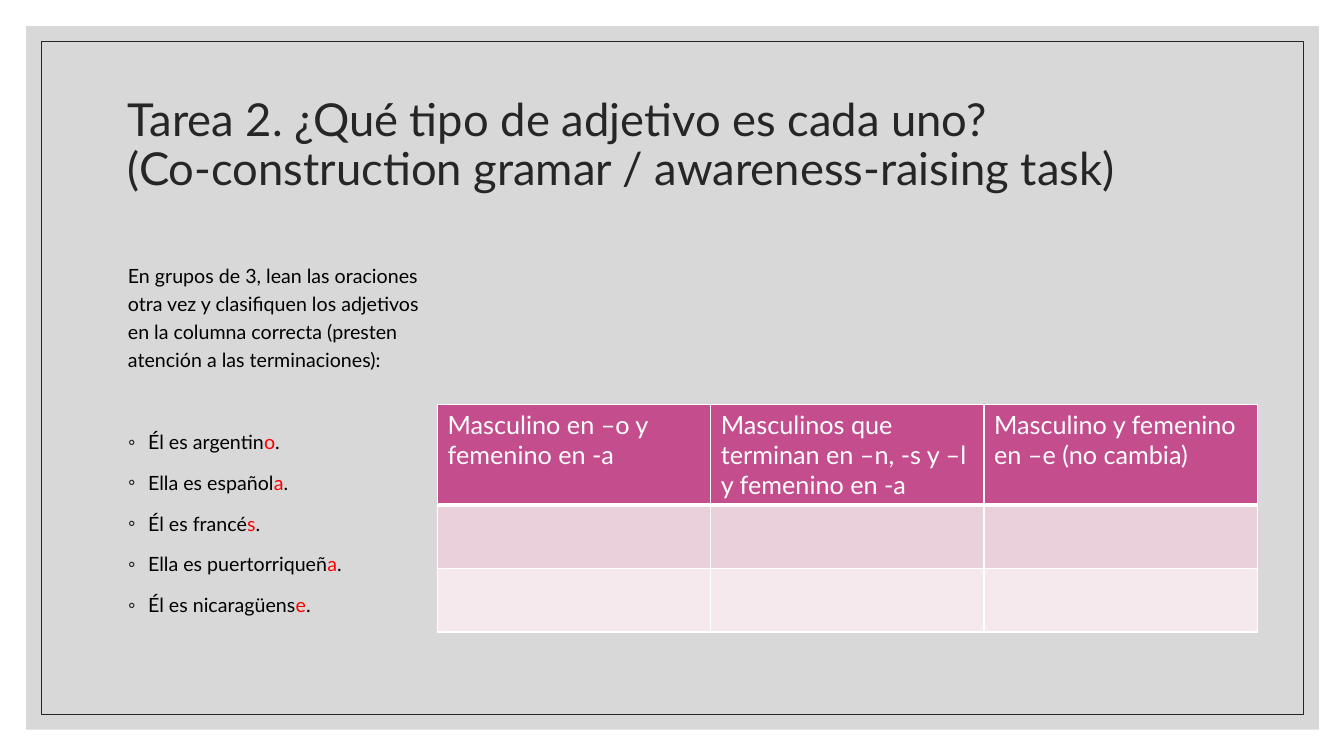
import lxml.etree
import pptx
import pptx.dml.color
import pptx.enum.shapes
import pptx.enum.text
import pptx.oxml.ns
import pptx.util

Inches, Pt = pptx.util.Inches, pptx.util.Pt
qn = pptx.oxml.ns.qn
rgb = pptx.dml.color.RGBColor.from_string
RECTANGLE = pptx.enum.shapes.MSO_SHAPE.RECTANGLE

THEME = {
    "font": "Lato",
    "panel": "BFBFBF", "ink": "262626", "text": "000000", "ending": "FF0000",
    "header": "C34D8D", "bands": ["E9D0DB", "F5E9EE"], "white": "FFFFFF",
    "title_size": 32.4, "body_size": 14, "table_size": 18,
}


def add_run(paragraph, text, size, color):
    run = paragraph.add_run()
    run.text = text
    settings = {"name": THEME["font"], "size": Pt(size), "bold": False}
    for attribute, value in settings.items():
        setattr(run.font, attribute, value)
    run.font.color.rgb = rgb(color)


def add_child(parent, tag, **attributes):
    return lxml.etree.SubElement(parent, qn(tag), attributes)


presentation = pptx.Presentation()
presentation.slide_width = Inches(13.33)
presentation.slide_height = Inches(7.5)
slide = presentation.slides.add_slide(presentation.slide_layouts[6])

# Backdrop: translucent panel with a thin inner frame
panel = slide.shapes.add_shape(RECTANGLE, Inches(0.26), Inches(0.26), Inches(12.82), Inches(6.98))
panel.shadow.inherit = False
panel.fill.solid()
panel.fill.fore_color.rgb = rgb(THEME["panel"])
panel.line.fill.background()
panel_color = panel._element.spPr.find(qn("a:solidFill")).find(qn("a:srgbClr"))
add_child(panel_color, "a:alpha", val="60000")

frame = slide.shapes.add_shape(RECTANGLE, Inches(0.41), Inches(0.41), Inches(12.52), Inches(6.68))
frame.shadow.inherit = False
frame.fill.background()
frame.line.color.rgb = rgb(THEME["ink"])
frame.line.width = Pt(0.5)

# Title
title = slide.shapes.add_textbox(Inches(1.17), Inches(0.7), Inches(11), Inches(1.5)).text_frame
title.word_wrap = True
title.vertical_anchor = pptx.enum.text.MSO_ANCHOR.MIDDLE
heading = title.paragraphs[0]
heading.line_spacing = 0.9
add_run(heading, "Tarea 2. ¿Qué tipo de adjetivo es cada uno?", THEME["title_size"], THEME["ink"])
heading.add_line_break()
add_run(heading, "(Co-construction gramar / awareness-raising task)", THEME["title_size"], THEME["ink"])

# Instructions, then sentences with the adjective ending highlighted
task = slide.shapes.add_textbox(Inches(1.17), Inches(2.52), Inches(3.18), Inches(4.21)).text_frame
task.word_wrap = True
instructions = task.paragraphs[0]
instructions.line_spacing = 1.2
add_run(
    instructions,
    "En grupos de 3, lean las oraciones otra vez y clasifiquen los adjetivos "
    "en la columna correcta (presten atención a las terminaciones):",
    THEME["body_size"], THEME["text"],
)

sentences = [
    ("Él es argentin", "o"),
    ("Ella es español", "a"),
    ("Él es francé", "s"),
    ("Ella es puertorriqueñ", "a"),
    ("Él es nicaragüens", "e"),
]
for index, (stem, ending) in enumerate(sentences):
    sentence = task.add_paragraph()
    sentence.line_spacing = 1.2
    sentence.space_before = Pt(9 if index else 38)
    properties = sentence._p.get_or_add_pPr()
    properties.set("marL", str(Inches(0.2)))
    properties.set("indent", str(-Inches(0.2)))
    bullet_color = add_child(properties, "a:buClr")
    add_child(bullet_color, "a:srgbClr", val=THEME["ink"])
    add_child(properties, "a:buFont", typeface=THEME["font"])
    add_child(properties, "a:buChar", char="◦")
    for text, color in [(stem, "text"), (ending, "ending"), (".", "text")]:
        add_run(sentence, text, THEME["body_size"], THEME[color])

# Classification table
categories = [
    "Masculino en –o y femenino en -a",
    "Masculinos que terminan en –n, -s y –l y femenino en -a",
    "Masculino y femenino en –e (no cambia)",
]
row_heights = [1, 0.63, 0.63]
row_fills = [THEME["header"], *THEME["bands"]]
table = slide.shapes.add_table(
    len(row_heights), len(categories), Inches(4.34), Inches(4.01), Inches(8.13), Inches(2.26)
).table
for column in table.columns:
    column.width = Inches(2.71)

for row_index, (row, height, fill) in enumerate(zip(table.rows, row_heights, row_fills)):
    row.height = Inches(height)
    for cell, category in zip(row.cells, categories):
        cell_properties = cell._tc.get_or_add_tcPr()
        for side in ("L", "R", "T", "B"):
            width = 3 if row_index == 0 and side == "B" else 1
            border = add_child(cell_properties, f"a:ln{side}", w=str(Pt(width)))
            border_fill = add_child(border, "a:solidFill")
            add_child(border_fill, "a:srgbClr", val=THEME["white"])
        cell.fill.solid()
        cell.fill.fore_color.rgb = rgb(fill)
        if row_index == 0:
            add_run(cell.text_frame.paragraphs[0], category, THEME["table_size"], THEME["white"])

presentation.save("out.pptx")
